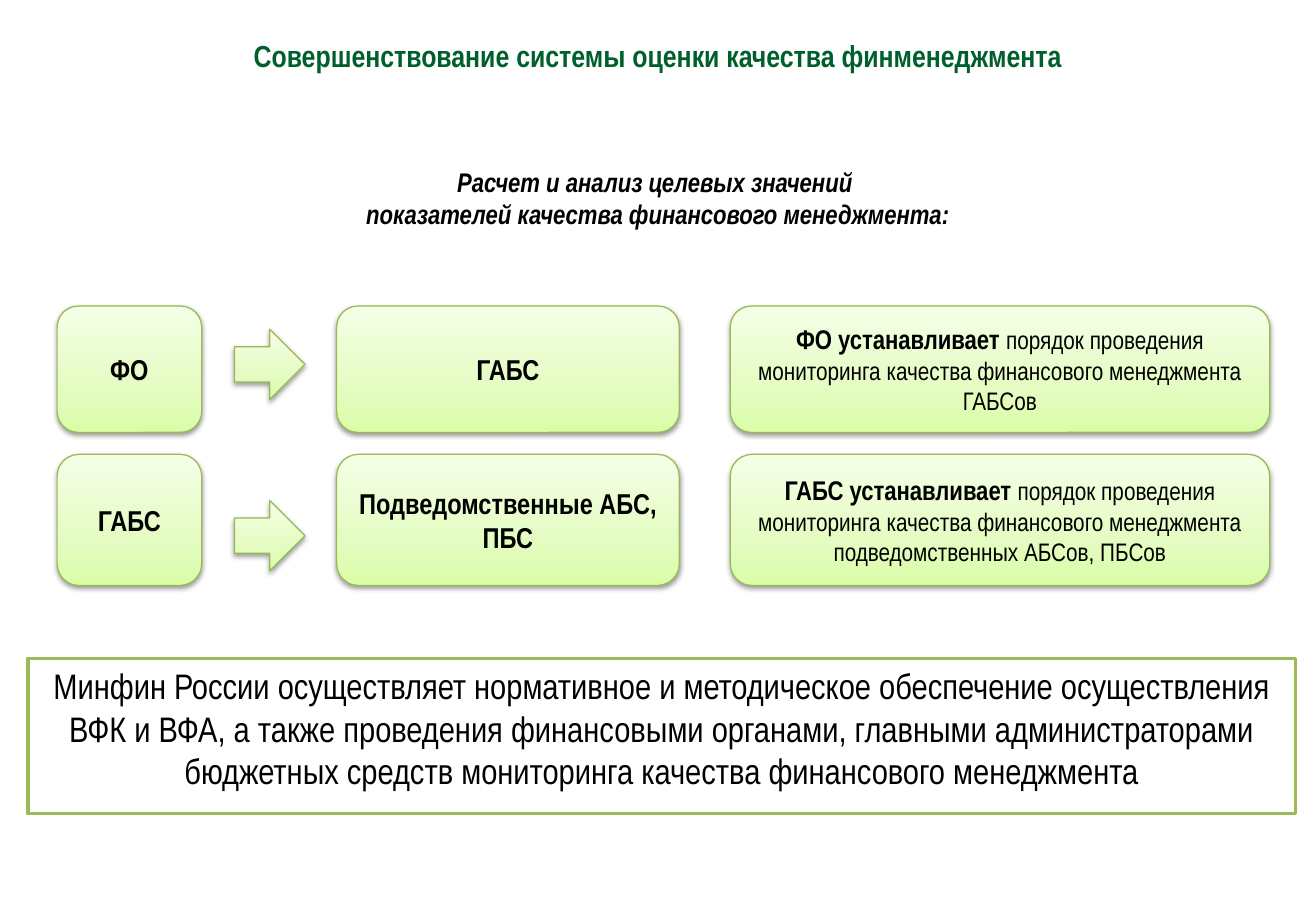
from pptx import Presentation
from pptx.dml.color import RGBColor
from pptx.enum.shapes import MSO_SHAPE
from pptx.enum.text import MSO_ANCHOR, MSO_AUTO_SIZE, PP_ALIGN
from pptx.oxml import parse_xml
from pptx.oxml.ns import nsdecls
from pptx.util import Inches, Pt

ROUNDED, ARROW, RECT = MSO_SHAPE.ROUNDED_RECTANGLE, MSO_SHAPE.RIGHT_ARROW, MSO_SHAPE.RECTANGLE
TOP, MIDDLE = MSO_ANCHOR.TOP, MSO_ANCHOR.MIDDLE
CENTER, NO_AUTOFIT = PP_ALIGN.CENTER, MSO_AUTO_SIZE.NONE

SLIDE_W, SLIDE_H = 10.83, 7.5
FONT = "Arial Narrow"
GRADIENT = [(0, "DAFDA7"), (35, "E4FCC2"), (100, "F5FFE7")]

# Flow grid: (left, width) of each column, (top, height, arrow offset) of each row
SOURCE_COL, ARROW_COL, TARGET_COL, RULE_COL = (0, 1.19), (1.46, 0.58), (2.3, 2.82), (5.54, 4.44)
ROWS = [(0, 1.04, 0.19), (1.22, 1.08, 0.38)]
ORDER = "порядок проведения мониторинга качества финансового менеджмента "
FLOWS = [
    ("ФО", "ГАБС", "ГАБСов"),
    ("ГАБС", "Подведомственные АБС, ПБС", "подведомственных АБСов, ПБСов"),
]


def color(value):
    return RGBColor.from_string(value)


def write(shape, *paragraphs, size=17, bold=False, italic=False, ink="000000",
          anchor=MIDDLE, spacing=None):
    """Each paragraph is a text or a list of (text, size, bold) runs."""
    frame = shape.text_frame
    frame.word_wrap = True
    frame.auto_size = NO_AUTOFIT
    frame.vertical_anchor = anchor
    for index, content in enumerate(paragraphs):
        paragraph = frame.add_paragraph() if index else frame.paragraphs[0]
        paragraph.alignment = CENTER
        paragraph.line_spacing = spacing
        runs = [(content, size, bold)] if isinstance(content, str) else content
        for text, run_size, run_bold in runs:
            run = paragraph.add_run()
            run.text = text
            font = run.font
            font.name, font.size = FONT, Pt(run_size)
            font.bold, font.italic = run_bold, italic
            font.color.rgb = color(ink)


def add_box(slide, kind, box, line, width):
    shape = slide.shapes.add_shape(kind, *map(Inches, box))
    shape.line.color.rgb = color(line)
    shape.line.width = Pt(width)
    shape.shadow.inherit = False
    return shape


def add_green(slide, kind, box):
    """Shape with the green upward gradient and a soft shadow below."""
    shape = add_box(slide, kind, box, "98B955", 0.75)
    stops = "".join(f'<a:gs pos="{pos * 1000}"><a:srgbClr val="{value}"/></a:gs>'
                    for pos, value in GRADIENT)
    properties = shape.element.spPr
    properties.ln.addprevious(parse_xml(
        f'<a:gradFill {nsdecls("a")} rotWithShape="1"><a:gsLst>{stops}</a:gsLst>'
        '<a:lin ang="16200000" scaled="0"/></a:gradFill>'))
    properties.effectLst.append(parse_xml(
        f'<a:outerShdw {nsdecls("a")} blurRad="{Pt(3.1)}" dist="{Pt(1.6)}" dir="5400000" '
        'rotWithShape="0"><a:srgbClr val="000000"><a:alpha val="38000"/></a:srgbClr>'
        '</a:outerShdw>'))
    return shape


def add_title(slide, box):
    title = slide.shapes.title
    title.left, title.top, title.width, title.height = map(Inches, box)
    write(title, "Совершенствование системы оценки качества финменеджмента",
          size=18, bold=True, ink="00602B", anchor=TOP, spacing=Pt(28))


def add_subtitle(slide, box):
    write(slide.shapes.add_textbox(*map(Inches, box)),
          "Расчет и анализ целевых значений ",
          "показателей качества финансового менеджмента:",
          size=16, bold=True, italic=True, anchor=TOP)


def add_flows(slide, left, top):
    for (source, target, subject), (row_top, height, arrow_drop) in zip(FLOWS, ROWS):
        y = top + row_top
        rule = [(f"{source} устанавливает ", 16, True), (ORDER + subject, 15, False)]
        for (x, width), content in ((SOURCE_COL, source), (TARGET_COL, target),
                                    (RULE_COL, rule)):
            card = add_green(slide, ROUNDED, (left + x, y, width, height))
            write(card, content, bold=True)
        x, side = ARROW_COL
        add_green(slide, ARROW, (left + x, y + arrow_drop, side, side))


def add_conclusion(slide, box):
    panel = add_box(slide, RECT, box, "9BBB59", 2)
    panel.fill.solid()
    panel.fill.fore_color.rgb = color("FFFFFF")
    write(panel, "Минфин России осуществляет нормативное и методическое обеспечение "
          "осуществления ВФК и ВФА, а также проведения финансовыми органами, главными "
          "администраторами бюджетных средств мониторинга качества финансового менеджмента",
          size=21, anchor=TOP)


def main():
    deck = Presentation()
    deck.slide_width, deck.slide_height = Inches(SLIDE_W), Inches(SLIDE_H)
    slide = deck.slides.add_slide(deck.slide_layouts[5])
    add_title(slide, (0, 0.17, SLIDE_W, 0.45))
    add_subtitle(slide, (0, 1.31, SLIDE_W, 0.64))
    add_flows(slide, 0.47, 2.52)
    add_conclusion(slide, (0.23, 5.42, 10.43, 1.28))
    deck.save("out.pptx")


if __name__ == "__main__":
    main()
